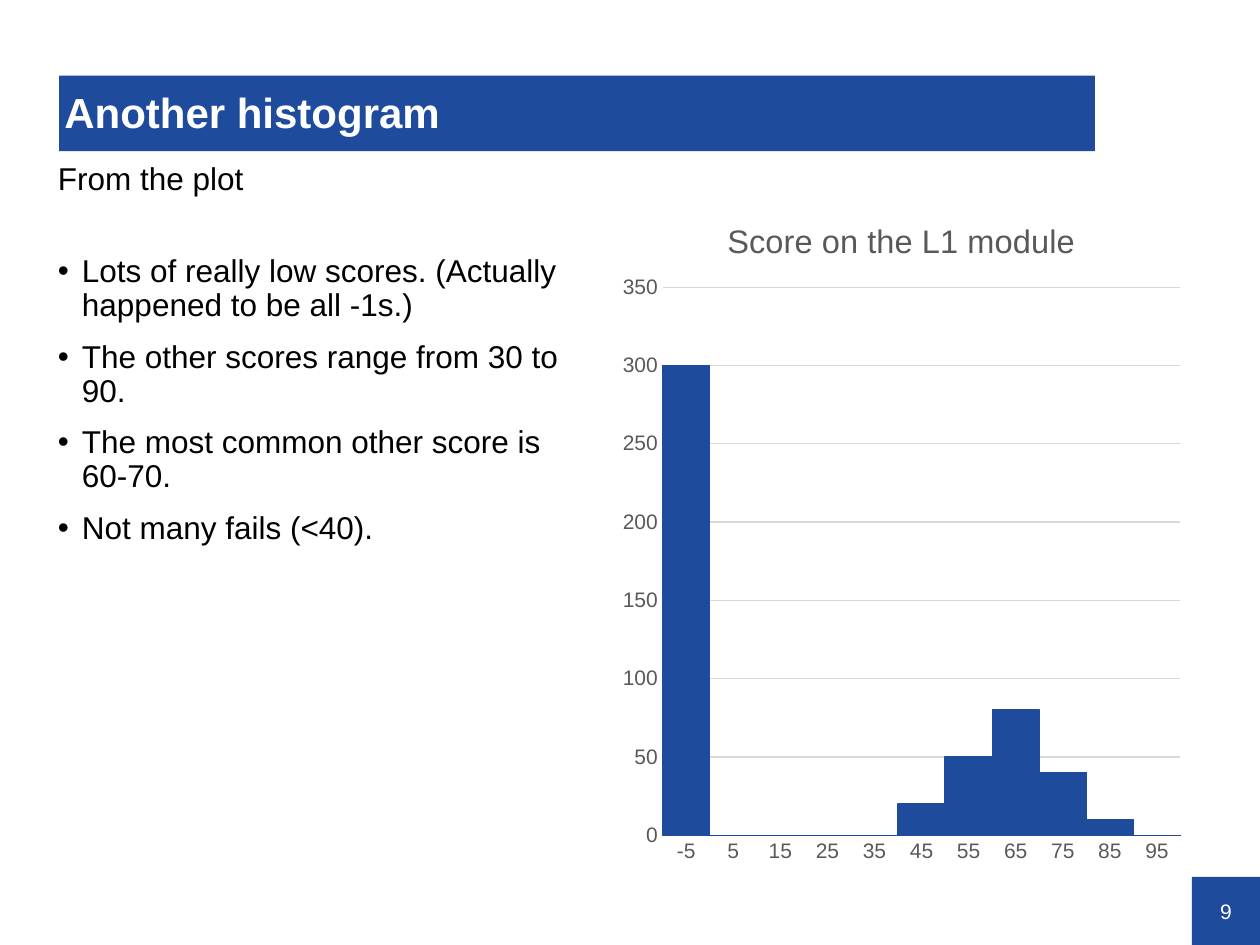
import pptx
import pptx.util
import pptx.chart.data
import pptx.dml.color
import pptx.enum.chart
import pptx.enum.shapes
import pptx.enum.text
import pptx.oxml
import lxml.etree
from dataclasses import dataclass

Inches, Pt = pptx.util.Inches, pptx.util.Pt
ALIGN = pptx.enum.text.PP_ALIGN
ANCHOR = pptx.enum.text.MSO_ANCHOR
DRAW = "{http://schemas.openxmlformats.org/drawingml/2006/main}"
CHART = "{http://schemas.openxmlformats.org/drawingml/2006/chart}"


@dataclass(frozen=True)
class Theme:
    font: str = "Arial"
    blue: str = "1E4B9B"
    white: str = "FFFFFF"
    black: str = "000000"
    grey: str = "595959"
    grid: str = "D9D9D9"
    head: float = 24
    body: float = 18
    chart: float = 18.6
    small: float = 12


THEME = Theme()

TITLE = "Another histogram"
LEAD = "From the plot"
POINTS = [
    "Lots of really low scores. (Actually happened to be all -1s.)",
    "The other scores range from 30 to 90.",
    "The most common other score is 60-70.",
    "Not many fails (<40).",
]
NUMBER = "9"
PLOT = "Score on the L1 module"
SCORES = {
    "-5": 300, "5": 0, "15": 0, "25": 0, "35": 0, "45": 20,
    "55": 50, "65": 80, "75": 40, "85": 10, "95": 0,
}

PLACES = {
    "title": (0.47, 0.6, 8.22, 0.6),
    "body": (0.42, 1.26, 4.22, 5.7),
    "chart": (4.85, 1.53, 4.61, 5.43),
    "number": (9.46, 6.96, 0.54, 0.54),
}
GRID = (5.26, 2.28, 4.11, 4.35)


def place(name):
    return [Inches(n) for n in PLACES[name]]


def tint(code):
    return pptx.dml.color.RGBColor.from_string(code)


def style(font, size, color, bold=False):
    font.name, font.size, font.bold = THEME.font, Pt(size), bold
    font.color.rgb = tint(color)


def write(para, text, size=THEME.body, color=THEME.black, bold=False,
          align=ALIGN.LEFT, before=0, lines=0.9, bullet=False):
    para.alignment, para.line_spacing = align, lines
    para.space_before = Pt(before)
    if bullet:
        props = para._p.get_or_add_pPr()
        props.set("marL", str(Inches(0.19)))
        props.set("indent", str(-Inches(0.19)))
        lxml.etree.SubElement(props, DRAW + "buFont", typeface=THEME.font)
        lxml.etree.SubElement(props, DRAW + "buChar", char="•")
    run = para.add_run()
    run.text = text
    style(run.font, size, color, bold)


def inset(frame, left, top, right, bottom):
    frame.word_wrap = True
    frame.margin_left, frame.margin_top = Inches(left), Inches(top)
    frame.margin_right, frame.margin_bottom = Inches(right), Inches(bottom)


def add_box(slide, name, text, pads, **format):
    box = slide.shapes.add_shape(
        pptx.enum.shapes.MSO_SHAPE.RECTANGLE, *place(name))
    box.shadow.inherit = False
    box.fill.solid()
    box.fill.fore_color.rgb = tint(THEME.blue)
    box.line.fill.background()
    frame = box.text_frame
    inset(frame, *pads)
    frame.vertical_anchor = ANCHOR.MIDDLE
    write(frame.paragraphs[0], text, color=THEME.white, **format)


def add_body(slide):
    frame = slide.shapes.add_textbox(*place("body")).text_frame
    inset(frame, 0.04, 0.04, 0.04, 0.04)
    write(frame.paragraphs[0], LEAD)
    for i, point in enumerate(POINTS):
        write(frame.add_paragraph(), point, bullet=True,
              before=10 if i else 33)


def fix_grid(chart):
    """Pin the inner plot area to GRID, as shares of the chart's frame."""
    left, top, width, height = PLACES["chart"]
    x, y, w, h = GRID
    area = chart._chartSpace.chart.plotArea
    for old in area.findall(CHART + "layout"):
        area.remove(old)
    layout = pptx.oxml.parse_xml(
        f'<c:layout xmlns:c="{CHART[1:-1]}"><c:manualLayout/></c:layout>')
    area.insert(0, layout)
    parts = {
        "layoutTarget": "inner", "xMode": "edge", "yMode": "edge",
        "x": (x - left) / width, "y": (y - top) / height,
        "w": w / width, "h": h / height,
    }
    for tag, val in parts.items():
        lxml.etree.SubElement(layout[0], CHART + tag, val=str(val))


def add_plot(slide):
    kinds = pptx.enum.chart
    data = pptx.chart.data.CategoryChartData()
    data.categories = list(SCORES)
    data.add_series("Series 1", list(SCORES.values()))
    chart = slide.shapes.add_chart(
        kinds.XL_CHART_TYPE.COLUMN_CLUSTERED, *place("chart"), data).chart
    style(chart.font, THEME.small, THEME.grey)
    chart.has_legend = False
    chart.has_title = True
    write(chart.chart_title.text_frame.paragraphs[0], PLOT, lines=None,
          size=THEME.chart, color=THEME.grey, align=ALIGN.CENTER)
    chart.chart_title.include_in_layout = False
    fix_grid(chart)

    plot = chart.plots[0]
    plot.gap_width, plot.overlap = 0, -27
    plot.vary_by_categories = False
    bars = plot.series[0].format
    bars.fill.solid()
    bars.fill.fore_color.rgb = tint(THEME.blue)

    cats, vals = chart.category_axis, chart.value_axis
    for axis in (cats, vals):
        axis.major_tick_mark = kinds.XL_TICK_MARK.NONE
        axis.minor_tick_mark = kinds.XL_TICK_MARK.NONE
        style(axis.tick_labels.font, THEME.small, THEME.grey)
    vals.minimum_scale, vals.maximum_scale, vals.major_unit = 0, 350, 50
    vals.format.line.fill.background()
    lines = [(bars.line, THEME.blue), (cats.format.line, THEME.grid),
             (vals.major_gridlines.format.line, THEME.grid)]
    for line, color in lines:
        line.color.rgb = tint(color)
        line.width = Pt(0.75)


def main():
    deck = pptx.Presentation()
    deck.slide_width, deck.slide_height = Inches(10), Inches(7.5)
    slide = deck.slides.add_slide(deck.slide_layouts[6])
    add_box(slide, "number", NUMBER, (0, 0, 0, 0), size=THEME.small,
            align=ALIGN.CENTER, lines=1.0)
    add_body(slide)
    add_box(slide, "title", TITLE, (0.04, 0.02, 0, 0), size=THEME.head,
            bold=True)
    add_plot(slide)
    deck.save("out.pptx")


if __name__ == "__main__":
    main()
